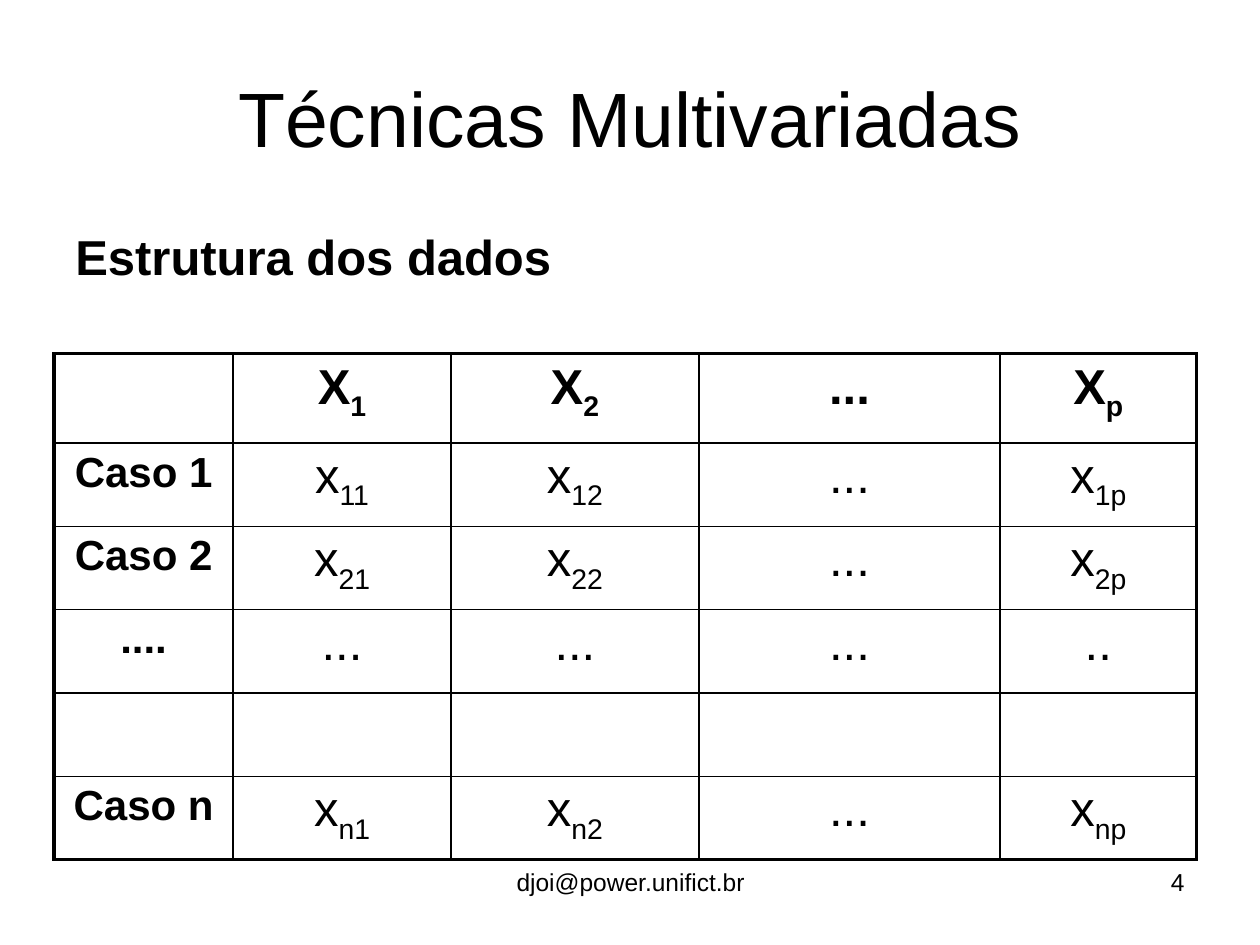
from pptx import Presentation
from pptx.dml.color import RGBColor
from pptx.enum.text import MSO_ANCHOR, PP_ALIGN
from pptx.oxml.ns import qn
from pptx.util import Cm, Pt
from lxml.etree import SubElement

# Content: an underscore marks the start of a subscript
TITLE = "Técnicas Multivariadas"
SUBTITLE = "Estrutura dos dados"
EMAIL = "djoi@power.unifict.br"
PAGE = "4"
DATA = [
    ["", "X_1", "X_2", "...", "X_p"],
    ["Caso 1", "x_11", "x_12", "...", "x_1p"],
    ["Caso 2", "x_21", "x_22", "...", "x_2p"],
    ["....", "...", "...", "...", ".."],
    ["", "", "", "", ""],
    ["Caso n", "x_n1", "x_n2", "...", "x_np"],
]
COLUMN_WIDTHS = [3.61, 4.39, 5.0, 6.07, 3.96]
ROW_HEIGHTS = [1.8] + [1.68] * 5

FONT = "Arial"
BLACK = RGBColor(0, 0, 0)
INNER, OUTER = Pt(1), Pt(2.25)


def format_runs(paragraph, size, bold=False, align=PP_ALIGN.CENTER):
    paragraph.alignment = align
    for run in paragraph.runs:
        run.font.name = FONT
        run.font.size = Pt(size)
        run.font.bold = bold
        run.font.color.rgb = BLACK


def add_label(slide, text, left, top, width, height, size, align, bold=False):
    frame = slide.shapes.add_textbox(Cm(left), Cm(top), Cm(width), Cm(height)).text_frame
    frame.word_wrap = True
    frame.text = text
    format_runs(frame.paragraphs[0], size, bold, align)
    return frame.paragraphs[0]


def set_borders(cell, widths):
    properties = cell._tc.get_or_add_tcPr()
    for side, width in widths.items():
        line = SubElement(properties, qn(f"a:ln{side}"), w=str(width))
        fill = SubElement(line, qn("a:solidFill"))
        SubElement(fill, qn("a:srgbClr"), val=str(BLACK))


def fill_cell(cell, text, size, bold):
    base, _, subscript = text.partition("_")
    paragraph = cell.text_frame.paragraphs[0]
    paragraph.text = base
    if subscript:
        run = paragraph.add_run()
        run.text = subscript
        run._r.get_or_add_rPr().set("baseline", "-25000")
    format_runs(paragraph, size, bold)


def add_data_table(slide):
    last_row, last_column = len(DATA) - 1, len(COLUMN_WIDTHS) - 1
    table = slide.shapes.add_table(
        len(DATA), len(COLUMN_WIDTHS), Cm(1.09), Cm(7.13),
        Cm(sum(COLUMN_WIDTHS)), Cm(sum(ROW_HEIGHTS))).table
    table.first_row = table.horz_banding = False
    for column, width in zip(table.columns, COLUMN_WIDTHS):
        column.width = Cm(width)
    for row, height in zip(table.rows, ROW_HEIGHTS):
        row.height = Cm(height)

    for r, values in enumerate(DATA):
        for c, value in enumerate(values):
            cell = table.cell(r, c)
            fill_cell(cell, value, 24 if c == 0 else 28, bold=r == 0 or c == 0)
            set_borders(cell, {
                "L": OUTER if c == 0 else INNER,
                "R": OUTER if c == last_column else INNER,
                "T": OUTER if r == 0 else INNER,
                "B": OUTER if r == last_row else INNER,
            })
            cell.fill.background()


def main():
    presentation = Presentation()
    presentation.slide_width, presentation.slide_height = Cm(25.4), Cm(19.05)
    slide = presentation.slides.add_slide(presentation.slide_layouts[5])

    # Title
    title = slide.shapes.title
    title.left, title.top, title.width, title.height = Cm(1.27), Cm(0.76), Cm(22.86), Cm(3.18)
    title.text_frame.text = TITLE
    title.text_frame.vertical_anchor = MSO_ANCHOR.MIDDLE
    format_runs(title.text_frame.paragraphs[0], 44)

    # Subtitle and data table
    subtitle = add_label(slide, SUBTITLE, 1.27, 4.45, 11.23, 12.57, 28, PP_ALIGN.LEFT, bold=True)
    subtitle.space_before = Pt(3)
    add_data_table(slide)

    # Footer
    add_label(slide, EMAIL, 8.69, 17.35, 8.05, 1.32, 14, PP_ALIGN.CENTER)
    add_label(slide, PAGE, 18.21, 17.35, 5.92, 1.32, 14, PP_ALIGN.RIGHT)

    presentation.save("out.pptx")


if __name__ == "__main__":
    main()
